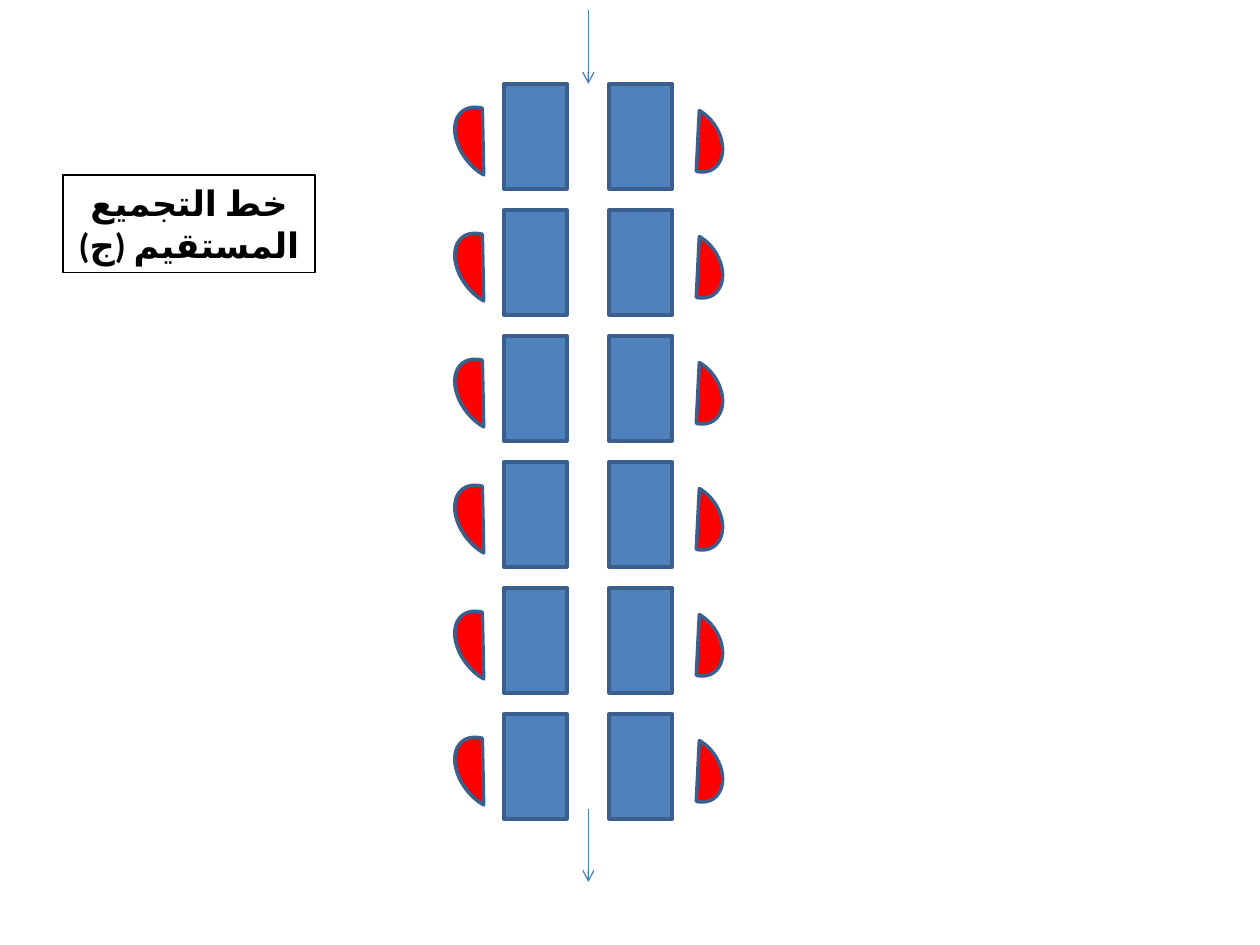
from dataclasses import dataclass

from pptx import Presentation
from pptx import util as u
from pptx.dml.color import RGBColor
from pptx.enum import shapes, text
from pptx.oxml import ns
from pptx.oxml.xmlchemy import OxmlElement
from pptx.shapes.autoshape import Shape
from pptx.slide import Slide

DESK_BLUE = RGBColor(0x4F, 0x81, 0xBD)
OUTLINE_BLUE = RGBColor(0x3A, 0x5F, 0x8C)
FLOW_BLUE = RGBColor(0x4B, 0x7E, 0xBC)
SEAT_RED = RGBColor(0xFF, 0x00, 0x00)
BLACK = RGBColor(0x00, 0x00, 0x00)
TITLE_FONT = "Calibri"

ROWS = 6
ROW_PITCH = 2.54
FIRST_ROW_TOP = 1.69
DESK_WIDTH, DESK_HEIGHT = 1.27, 2.12
RIGHT_DESK_LEFT, LEFT_DESK_LEFT = 12.28, 10.16
FLOW_X = 11.86
FLOW_LENGTH = 1.48
FLOW_TOPS = (0.21, 16.3)
SEAT_ANGLES = (36.306, 133.364)


@dataclass(frozen=True)
class Seat:
    """A seat's box in cm; drop is measured from the top of its row."""
    left: float
    drop: float
    width: float
    height: float
    rotation: float


RIGHT_SEAT = Seat(13.45, 0.39, 1.04, 1.45, 144.8)
LEFT_SEAT = Seat(9.3, 0.37, 1.09, 1.68, 320.9)


def add_outlined(slide: Slide, kind: shapes.MSO_SHAPE, left: float, top: float,
                 width: float, height: float, fill: RGBColor) -> Shape:
    shape = slide.shapes.add_shape(
        kind, u.Cm(left), u.Cm(top), u.Cm(width), u.Cm(height))
    shape.shadow.inherit = False
    shape.fill.solid()
    shape.fill.fore_color.rgb = fill
    shape.line.color.rgb = OUTLINE_BLUE
    shape.line.width = u.Pt(2)
    return shape


def add_desk(slide: Slide, left: float, top: float) -> None:
    add_outlined(slide, shapes.MSO_SHAPE.RECTANGLE, left, top,
                 DESK_WIDTH, DESK_HEIGHT, DESK_BLUE)


def add_seat(slide: Slide, seat: Seat, row_top: float) -> None:
    chord = add_outlined(slide, shapes.MSO_SHAPE.CHORD, seat.left,
                         row_top + seat.drop, seat.width, seat.height, SEAT_RED)
    for index, angle in enumerate(SEAT_ANGLES):
        chord.adjustments[index] = angle
    chord.rotation = seat.rotation
    chord._element.spPr.find(ns.qn("a:xfrm")).set("flipV", "1")


def add_flow_arrow(slide: Slide, top: float) -> None:
    arrow = slide.shapes.add_connector(
        shapes.MSO_CONNECTOR.STRAIGHT, u.Cm(FLOW_X), u.Cm(top),
        u.Cm(FLOW_X), u.Cm(top + FLOW_LENGTH))
    arrow.line.color.rgb = FLOW_BLUE
    arrow.line.width = u.Pt(0.75)
    head = OxmlElement("a:tailEnd")
    head.set("type", "arrow")
    arrow.line._get_or_add_ln().append(head)
    arrow._element.spPr.append(OxmlElement("a:effectLst"))


def add_title(slide: Slide) -> None:
    title = slide.shapes.add_textbox(u.Cm(1.27), u.Cm(3.53), u.Cm(5.08), u.Cm(1.96))
    title.line.color.rgb = BLACK
    title.line.width = u.Pt(0.75)
    frame = title.text_frame
    frame.word_wrap = True
    frame.auto_size = text.MSO_AUTO_SIZE.SHAPE_TO_FIT_TEXT
    paragraph = frame.paragraphs[0]
    paragraph.alignment = text.PP_ALIGN.CENTER
    paragraph._p.get_or_add_pPr().set("rtl", "1")
    run = paragraph.add_run()
    run.text = "خط التجميع المستقيم (ج)"
    run.font.name = TITLE_FONT
    run.font.size = u.Pt(20)
    run.font.bold = True
    run.font.color.rgb = BLACK
    properties = run._r.get_or_add_rPr()
    properties.set("lang", "ar-SA")
    arabic_font = OxmlElement("a:cs")
    arabic_font.set("typeface", TITLE_FONT)
    properties.append(arabic_font)


def main() -> None:
    deck = Presentation()
    deck.slide_width, deck.slide_height = u.Cm(25.4), u.Cm(19.05)
    slide = deck.slides.add_slide(deck.slide_layouts[6])

    add_title(slide)
    for row in range(ROWS):
        top = FIRST_ROW_TOP + row * ROW_PITCH
        add_desk(slide, RIGHT_DESK_LEFT, top)
        add_seat(slide, RIGHT_SEAT, top)
        add_seat(slide, LEFT_SEAT, top)
        add_desk(slide, LEFT_DESK_LEFT, top)
    for top in FLOW_TOPS:
        add_flow_arrow(slide, top)

    deck.save("out.pptx")


if __name__ == "__main__":
    main()
